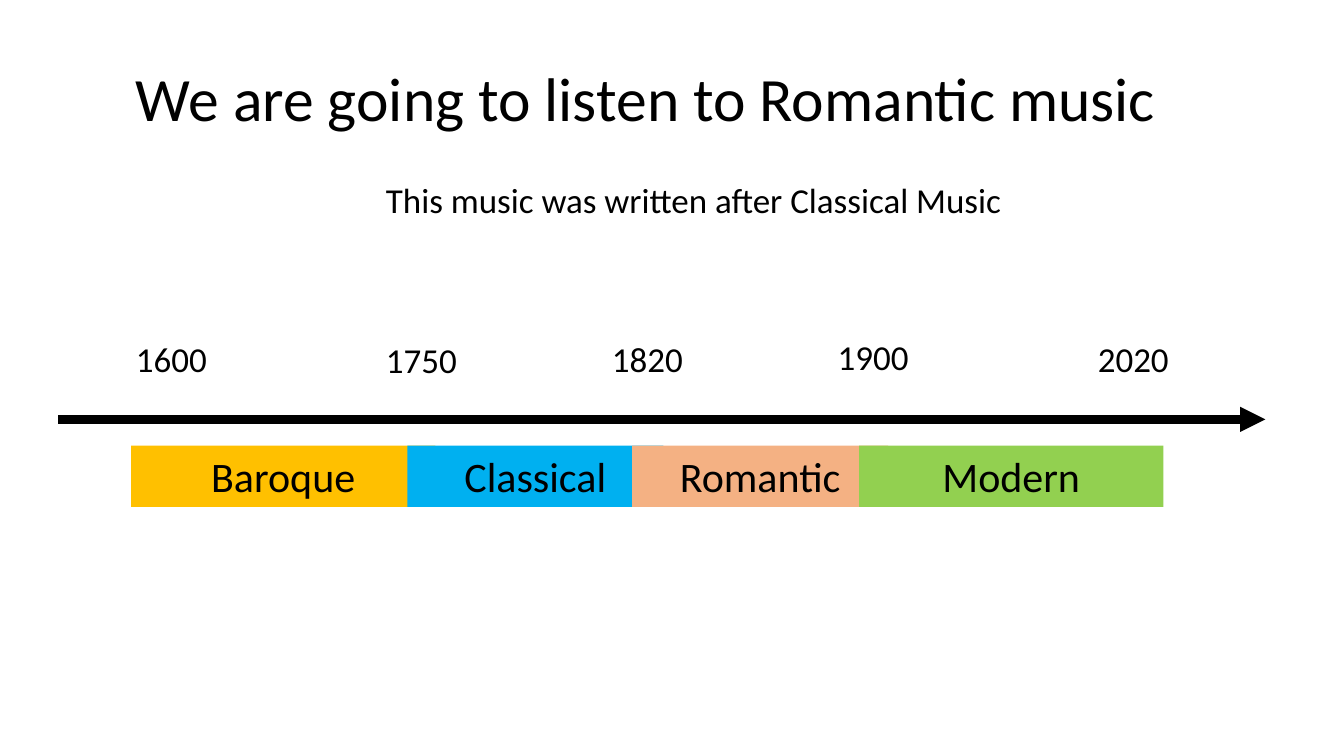
import pptx
import pptx.util
import pptx.dml.color
import pptx.enum.shapes
import pptx.enum.text
import pptx.oxml.ns
from lxml import etree

TITLE = "We are going to listen to Romantic music"
NOTE = "This music was written after Classical Music"
YEARS = [
    ("1600", 9.38, 44),
    ("1750", 27.98, 44.13),
    ("1820", 44.79, 44),
    ("1900", 61.59, 43.73),
    ("2020", 80.95, 44),
]
ERAS = [
    ("Baroque", 9.75, 22.65, "FFC000"),
    ("Classical", 30.31, 19.05, "00B0F0"),
    ("Romantic", 47.04, 19.05, "F4B183"),
    ("Modern", 63.92, 22.65, "92D050"),
]
THEME = {"font": "Calibri", "ink": "000000", "title": 44, "body": 25, "era": 30, "line": 6}
WIDE, HIGH = 13.33, 7.5
YEAR_W, TEXT_H = 8.93, 6.93
ERA_TOP, ERA_H = 58.93, 8.13
AXIS_Y, AXIS_FROM, AXIS_TO = 55.47, 4.35, 94.15

deck = pptx.Presentation()
deck.slide_width = pptx.util.Inches(WIDE)
deck.slide_height = pptx.util.Inches(HIGH)
slide = deck.slides.add_slide(deck.slide_layouts[6])
shapes = slide.shapes


def across(share):
    return pptx.util.Inches(WIDE * share / 100)


def down(share):
    return pptx.util.Inches(HIGH * share / 100)


def place(x, y, w, h):
    return across(x), down(y), across(w), down(h)


def color(code):
    return pptx.dml.color.RGBColor.from_string(code)


def write(shape, text, size, wrap=True):
    frame = shape.text_frame
    frame.text = text
    frame.word_wrap = wrap
    font = frame.paragraphs[0].runs[0].font
    font.name = THEME["font"]
    font.size = pptx.util.Pt(THEME[size])
    font.color.rgb = color(THEME["ink"])
    return frame


def label(text, size, box, wrap=True):
    return write(shapes.add_textbox(*place(*box)), text, size, wrap)


title = label(TITLE, "title", (9.38, 3.73, 86.27, 19.33))
title.vertical_anchor = pptx.enum.text.MSO_ANCHOR.MIDDLE
title.paragraphs[0].line_spacing = 0.9

axis = shapes.add_connector(
    pptx.enum.shapes.MSO_CONNECTOR.STRAIGHT,
    across(AXIS_FROM), down(AXIS_Y), across(AXIS_TO), down(AXIS_Y),
)
axis.line.color.rgb = color(THEME["ink"])
axis.line.width = pptx.util.Pt(THEME["line"])
qn = pptx.oxml.ns.qn
etree.SubElement(axis.line._get_or_add_ln(), qn("a:tailEnd"), type="triangle")
etree.SubElement(axis._element.spPr, qn("a:effectLst"))

for year, x, y in YEARS:
    label(year, "body", (x, y, YEAR_W, TEXT_H))

for era, x, w, fill in ERAS:
    bar = shapes.add_shape(
        pptx.enum.shapes.MSO_SHAPE.RECTANGLE, *place(x, ERA_TOP, w, ERA_H)
    )
    bar.shadow.inherit = False
    bar.fill.solid()
    bar.fill.fore_color.rgb = color(fill)
    bar.line.fill.background()
    frame = write(bar, era, "era")
    frame.paragraphs[0].alignment = pptx.enum.text.PP_ALIGN.CENTER
    frame.vertical_anchor = pptx.enum.text.MSO_ANCHOR.TOP

label(NOTE, "body", (27.98, 22.93, 47.94, TEXT_H), False)

deck.save("out.pptx")
